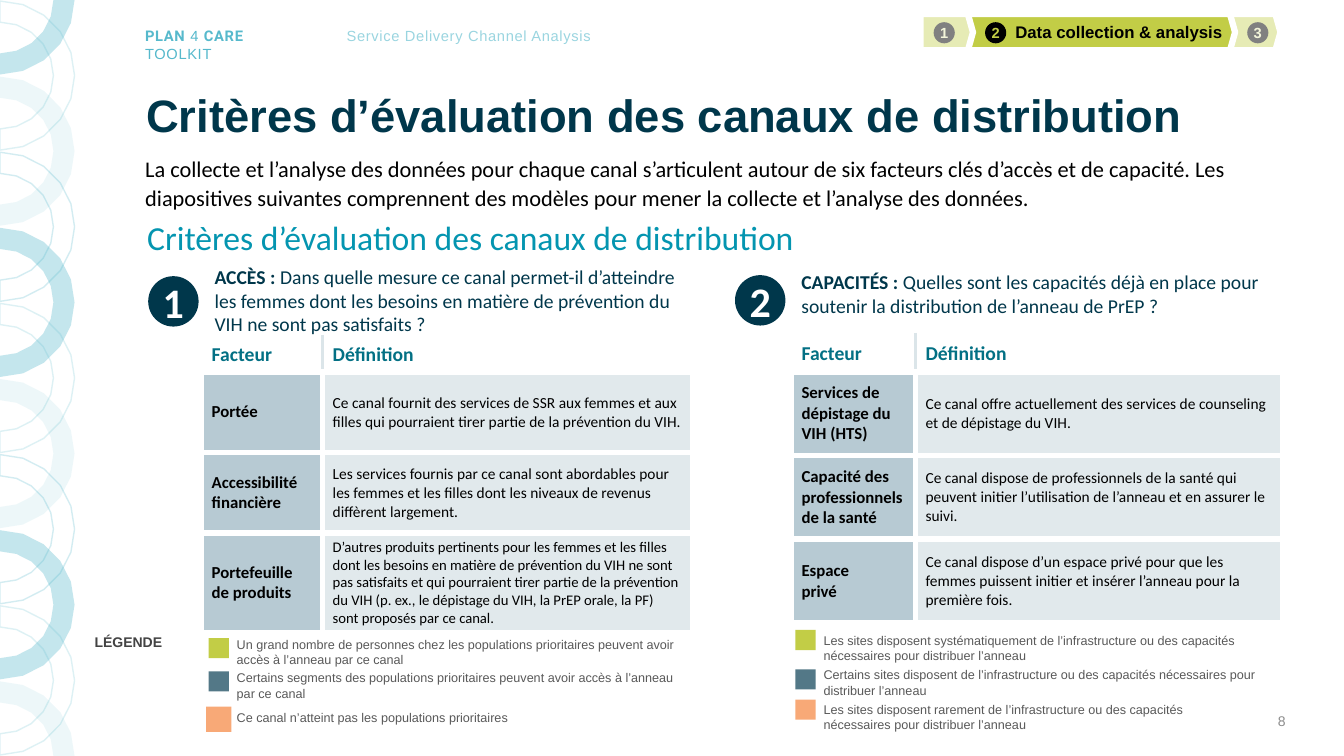
import math

from lxml import etree
from pptx import Presentation, util as u
from pptx.dml.color import RGBColor
from pptx.enum import shapes, text
from pptx.oxml.ns import qn

# Every length is a number of grid cells; a cell is a tenth of an inch.
COLUMNS, ROWS = 133.3, 75
COLOURS = {
    "navy": "00374B", "teal": "0495B0", "header": "037084", "aqua": "56B9CC",
    "pale_aqua": "9AD5E0", "lime": "C2CD46", "pale_lime": "F3F5DA",
    "slate": "537887", "orange": "F8A977", "factor": "B7CAD3",
    "definition": "E1E9EC", "divider": "DBE5E9", "white": "FFFFFF",
    "black": "000000", "gray": "808080", "number": "8C8C8C",
    "legend": "595959", "dark": "434343",
}
ALIGN = text.PP_ALIGN
ANCHOR = text.MSO_ANCHOR
SHAPE = shapes.MSO_SHAPE


def cells(count):
    return u.Inches(count / 10)


def colour(name):
    return RGBColor.from_string(COLOURS[name])


def write(frame, content, font="Arial", size=10, ink="black", bold=False, align=ALIGN.LEFT,
          anchor=ANCHOR.TOP, insets=(1, 0.5, 1, 0.5), spacing=None, tracking=None, wrap=True):
    """Fill a frame with a string, or with (string, changed format) pairs."""
    frame.word_wrap = wrap
    frame.auto_size = text.MSO_AUTO_SIZE.NONE
    frame.vertical_anchor = anchor
    frame.margin_left, frame.margin_top, frame.margin_right, frame.margin_bottom = map(cells, insets)
    paragraph = frame.paragraphs[0]
    paragraph.alignment = align
    paragraph.space_before = u.Pt(0)
    if spacing:
        paragraph.line_spacing = spacing
    for words, changes in [(content, {})] if isinstance(content, str) else content:
        for index, line in enumerate(words.split("\n")):
            if index:
                paragraph.add_line_break()
            run = paragraph.add_run()
            run.text = line
            run.font.name = changes.get("font", font)
            run.font.size = u.Pt(size)
            run.font.bold = changes.get("bold", bold)
            run.font.color.rgb = colour(ink)
            if tracking:
                run._r.get_or_add_rPr().set("spc", str(tracking))


def add_text(slide, box, content, **style):
    write(slide.shapes.add_textbox(*map(cells, box)).text_frame, content, **style)


def paint(shape, fill=None, line=None, width=1, alpha=None):
    """Colour a shape; alpha, in percent, applies to its first colour."""
    shape.shadow.inherit = False
    if fill:
        shape.fill.solid()
        shape.fill.fore_color.rgb = colour(fill)
    else:
        shape.fill.background()
    if line:
        shape.line.color.rgb = colour(line)
        shape.line.width = u.Pt(width)
    else:
        shape.line.fill.background()
    if alpha:
        first = next(shape._element.spPr.iter(qn("a:srgbClr")))
        etree.SubElement(first, qn("a:alpha")).set("val", str(alpha * 1000))


def add_shape(slide, kind, box, **look):
    shape = slide.shapes.add_shape(kind, *map(cells, box))
    paint(shape, **look)
    return shape


def add_badge(slide, box, digit, fill, **style):
    badge = add_shape(slide, SHAPE.OVAL, box, fill=fill)
    write(badge.text_frame, digit, bold=True, align=ALIGN.CENTER, anchor=ANCHOR.MIDDLE,
          insets=(0, 0, 0, 0), wrap=False, **style)


def add_rings(slide, outer=7.4, inner=5.3, count=10, turn=18):
    looks = [{"fill": "aqua", "alpha": 35}, {"line": "aqua", "alpha": 20},
             {"fill": "aqua", "alpha": 10}, {"line": "aqua", "alpha": 25}]
    for index in range(count + 1):
        middle = ROWS / count * index
        start = 0 if index == 0 else -90
        end = 0 if index == count else 90
        angles = [math.radians(angle) for angle in range(start, end, turn)] + [math.radians(end)]
        arcs = [(outer, a) for a in angles] + [(inner, a) for a in reversed(angles)]
        points = [(cells(r * math.cos(a)), cells(middle + r * math.sin(a))) for r, a in arcs]
        builder = slide.shapes.build_freeform(*points[0])
        builder.add_line_segments(points[1:], close=True)
        paint(builder.convert_to_shape(), **looks[index % 4])


def add_header(slide):
    light = {"font": "Arial", "bold": False}
    add_text(slide, (13.4, 2.2, 16.8, 4.4),
             [("PLAN", {}), (" 4 ", light), ("CARE ", {}), ("TOOLKIT", light)],
             font="Roboto", size=10.5, ink="aqua", bold=True, tracking=50)
    add_text(slide, (33.4, 2.2, 27.3, 2.8), "Service Delivery Channel Analysis",
             size=10.5, ink="pale_aqua", tracking=50)


def add_progress(slide, top=1.4):
    """Steps are laid from right to left so that each tip covers the next step."""
    steps = [("3", 121.8, 5.2, 123.7, ""),
             ("2", 95.9, 26.6, 97.7, "Data collection & analysis"),
             ("1", 91.3, 5.2, 92.6, "")]
    for digit, left, width, badge_left, label in steps:
        step = add_shape(slide, SHAPE.PENTAGON, (left, top, width, 3.6), fill="lime",
                         line="white", width=4.5, alpha=None if label else 40)
        step.adjustments[0] = 0.14
        if label:
            write(step.text_frame, label, size=12, bold=True, align=ALIGN.RIGHT,
                  anchor=ANCHOR.MIDDLE)
        add_badge(slide, (badge_left, top + 0.8, 2.1, 2.1), digit, "black" if label else "gray",
                  size=10.5, ink="lime" if label else "pale_lime")


def fill_placeholder(placeholder, box, content, **style):
    placeholder.left, placeholder.top, placeholder.width, placeholder.height = map(cells, box)
    write(placeholder.text_frame, content, **style)
    properties = placeholder.text_frame.paragraphs[0]._p.get_or_add_pPr()
    properties.set("marL", "0")
    properties.set("indent", "0")
    etree.SubElement(properties, qn("a:buNone"))


def format_cell(cell, content, fill, edges, **style):
    """Edges maps a side (L, R, T, B) to a colour and a width in points."""
    write(cell.text_frame, content, font="Calibri", **style)
    cell.vertical_anchor = ANCHOR.MIDDLE
    properties = cell._tc.get_or_add_tcPr()
    for side in "LRTB":
        name, width = edges.get(side, ("white", 4.5))
        border = etree.SubElement(properties, qn(f"a:ln{side}"), w=str(u.Pt(width)))
        solid = etree.SubElement(border, qn("a:solidFill"))
        etree.SubElement(solid, qn("a:srgbClr"), val=COLOURS[name])
    cell.fill.solid()
    cell.fill.fore_color.rgb = colour(fill)


def add_criteria_table(slide, box, widths, heights, criteria, sizes):
    frame = slide.shapes.add_table(len(criteria) + 1, 2, *map(cells, box))
    table = frame.table
    table.first_row = table.horz_banding = False
    for column, width in zip(table.columns, widths):
        column.width = cells(width)
    for row, height in zip(table.rows, heights):
        row.height = cells(height)
    for column, (title, side) in enumerate([("Facteur", "R"), ("Définition", "L")]):
        format_cell(table.cell(0, column), title, "white", {side: ("divider", 3)},
                    size=14, ink="header", bold=True)
    for row, ((factor, definition), size) in enumerate(zip(criteria, sizes), 1):
        format_cell(table.cell(row, 0), factor, "factor", {}, size=12, bold=True)
        format_cell(table.cell(row, 1), definition, "definition", {}, size=size)


def add_legend(slide, left, entries):
    for fill, (top, size, text_top, width, label) in zip(("lime", "slate", "orange"), entries):
        add_shape(slide, SHAPE.RECTANGLE, (left + 1 - size / 2, top, size, size), fill=fill)
        add_text(slide, (left + 1.8, text_top, width, 3), label, size=9, ink="legend",
                 insets=(1, 0, 1, 0.5))


def add_panel(slide, left, top, digit, question, table, legend):
    add_badge(slide, (left, top, 5, 5), digit, "navy", font="Calibri", size=30, ink="white")
    question_top, heading, body = question
    add_text(slide, (left + 5.6, question_top, 48.7, 7), [(heading, {"bold": True}), (body, {})],
             font="Calibri", size=14, ink="navy")
    offset, table_top, widths, heights, criteria, sizes = table
    add_criteria_table(slide, (left + offset, table_top, sum(widths), sum(heights)),
                       widths, heights, criteria, sizes)
    add_legend(slide, left + 6, legend)


ACCESS = [
    ("Portée", "Ce canal fournit des services de SSR aux femmes et aux filles qui pourraient tirer partie de la prévention du VIH."),
    ("Accessibilité financière", "Les services fournis par ce canal sont abordables pour les femmes et les filles dont les niveaux de revenus diffèrent largement."),
    ("Portefeuille de produits", "D’autres produits pertinents pour les femmes et les filles dont les besoins en matière de prévention du VIH ne sont pas satisfaits et qui pourraient tirer partie de la prévention du VIH (p. ex., le dépistage du VIH, la PrEP orale, la PF) sont proposés par ce canal."),
]
CAPACITY = [
    ("Services de dépistage du VIH (HTS)", "Ce canal offre actuellement des services de counseling et de dépistage du VIH."),
    ("Capacité des professionnels de la santé", "Ce canal dispose de professionnels de la santé qui peuvent initier l’utilisation de l’anneau et en assurer le suivi."),
    ("Espace\nprivé", "Ce canal dispose d’un espace privé pour que les femmes puissent initier et insérer l’anneau pour la première fois."),
]


def build_slide(presentation):
    slide = presentation.slides.add_slide(presentation.slide_layouts[3])
    title, subtitle, intro = slide.placeholders
    add_rings(slide)
    add_header(slide)
    add_progress(slide)
    heading = "Critères d’évaluation des canaux de distribution"
    fill_placeholder(title, (13.5, 8.9, 111, 5.6), heading, size=32.4, ink="navy", bold=True,
                     anchor=ANCHOR.MIDDLE, spacing=0.9)
    fill_placeholder(subtitle, (13.6, 20.6, 111, 5.2), heading, font="Calibri", size=24,
                     ink="teal", spacing=1.1)
    fill_placeholder(intro, (13.4, 14.6, 110.2, 7.5), "La collecte et l’analyse des données pour chaque canal s’articulent autour de six facteurs clés d’accès et de capacité. Les diapositives suivantes comprennent des modèles pour mener la collecte et l’analyse des données.",
                     font="Calibri", size=16, spacing=1.1)
    add_panel(
        slide, 14.7, 27.4, "1",
        (25.8, "ACCÈS : ", "Dans quelle mesure ce canal permet-il d’atteindre les femmes dont les besoins en matière de prévention du VIH ne sont pas satisfaits ?"),
        (5.3, 33.5, (12, 36.7), (3.4, 8, 8, 9.7), ACCESS, (11, 11, 10.5)),
        [(63.3, 2, 63.2, 46.6, "Un grand nombre de personnes chez les populations prioritaires peuvent avoir accès à l’anneau par ce canal"),
         (66.6, 2, 66.5, 46.6, "Certains segments des populations prioritaires peuvent avoir accès à l’anneau par ce canal"),
         (70.1, 2.5, 70.4, 34.3, "Ce canal n’atteint pas les populations prioritaires")])
    add_panel(
        slide, 72.9, 27.3, "2",
        (26.3, "CAPACITÉS : ", "Quelles sont les capacités déjà en place pour soutenir la distribution de l’anneau de PrEP ?"),
        (5.6, 33.3, (12.3, 36.4), (3.6, 8.3, 8.3, 8.3), CAPACITY, (11, 11, 11)),
        [(62.5, 2, 62.8, 46.6, "Les sites disposent systématiquement de l’infrastructure ou des capacités nécessaires pour distribuer l’anneau"),
         (66.4, 2, 66.2, 46.6, "Certains sites disposent de l’infrastructure ou des capacités nécessaires pour distribuer l’anneau"),
         (69.4, 2, 69.6, 43.7, "Les sites disposent rarement de l’infrastructure ou des capacités nécessaires pour distribuer l’anneau")])
    add_text(slide, (8.4, 62.7, 12.9, 3.5), "LÉGENDE", ink="dark", bold=True, spacing=1.1,
             insets=(1, 0, 1, 0.5))
    add_text(slide, (98.5, 69.5, 30, 4), "8", ink="number", align=ALIGN.RIGHT,
             anchor=ANCHOR.MIDDLE)


def main():
    presentation = Presentation()
    presentation.slide_width, presentation.slide_height = cells(COLUMNS), cells(ROWS)
    build_slide(presentation)
    presentation.save("out.pptx")


if __name__ == "__main__":
    main()
